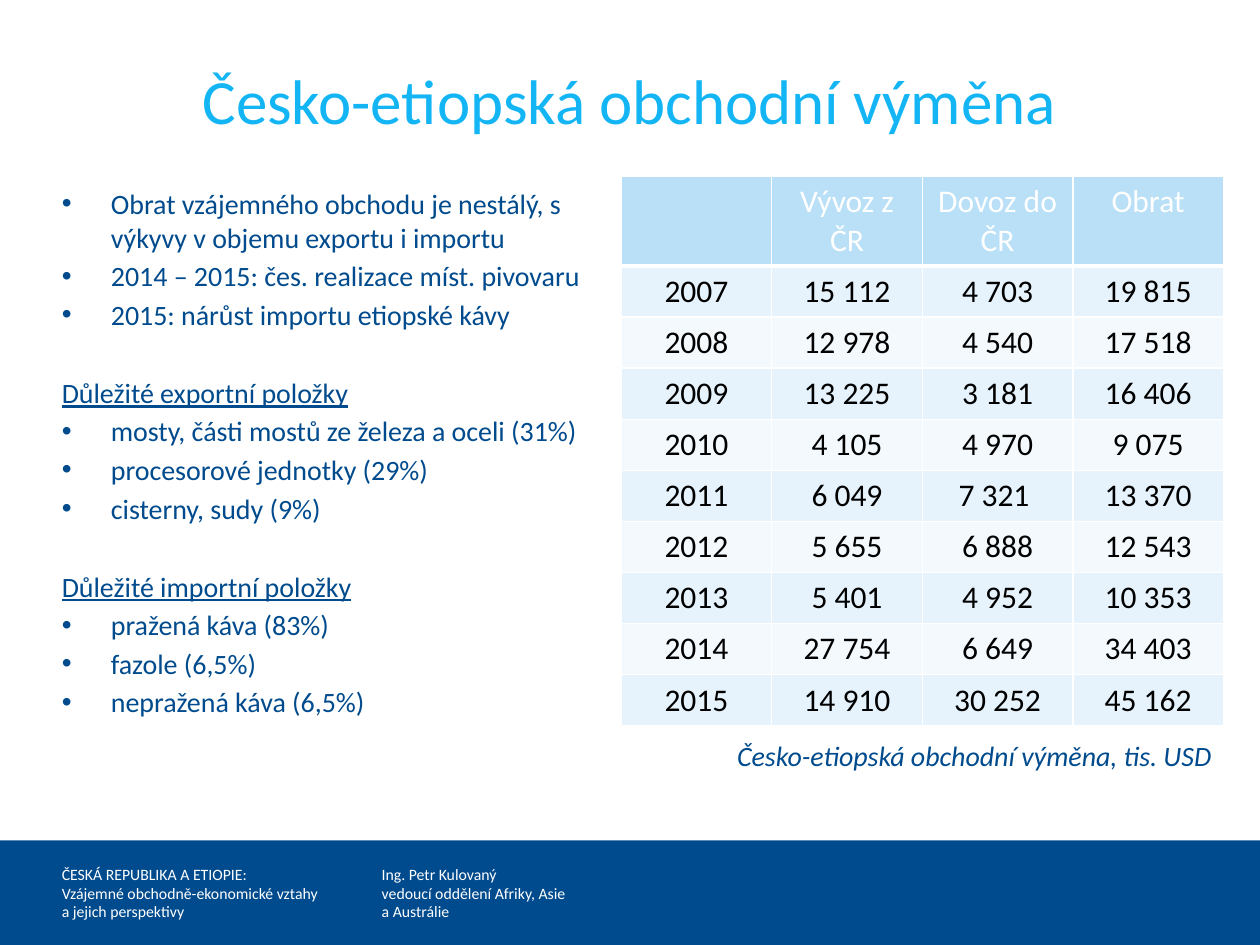
from lxml.etree import SubElement
from pptx import Presentation
from pptx.dml.color import RGBColor
from pptx.enum.shapes import MSO_SHAPE
from pptx.enum.text import MSO_ANCHOR, MSO_AUTO_SIZE, PP_ALIGN
from pptx.oxml.ns import qn
from pptx.util import Inches, Pt

NAVY = RGBColor(0x00, 0x4B, 0x8D)
SKY = RGBColor(0x13, 0xB5, 0xF4)
WHITE = RGBColor(0xFF, 0xFF, 0xFF)
BLACK = RGBColor(0x00, 0x00, 0x00)
HEADER_FILL = RGBColor(0xB9, 0xE0, 0xF7)
BAND_FILLS = (RGBColor(0xE6, 0xF3, 0xFC), RGBColor(0xF3, 0xF9, 0xFD))
FONT = "Calibri"

TITLE = "Česko-etiopská obchodní výměna"
CAPTION = "Česko-etiopská obchodní výměna, tis. USD"
SECTIONS = [
    (None, ["Obrat vzájemného obchodu je nestálý, s výkyvy v objemu exportu i importu",
            "2014 – 2015: čes. realizace míst. pivovaru",
            "2015: nárůst importu etiopské kávy"]),
    ("Důležité exportní položky", ["mosty, části mostů ze železa a oceli (31%)",
                                   "procesorové jednotky (29%)",
                                   "cisterny, sudy (9%)"]),
    ("Důležité importní položky", ["pražená káva (83%)",
                                   "fazole (6,5%)",
                                   "nepražená káva (6,5%)"]),
]
TRADE = [
    ("", "Vývoz z ČR", "Dovoz do ČR", "Obrat"),
    ("2007", "15 112", "4 703", "19 815"),
    ("2008", "12 978", "4 540", "17 518"),
    ("2009", "13 225", "3 181", "16 406"),
    ("2010", "4 105", "4 970", "9 075"),
    ("2011", "6 049", "7 321 ", "13 370"),
    ("2012", "5 655", "6 888", "12 543"),
    ("2013", "5 401", "4 952", "10 353"),
    ("2014", "27 754", "6 649", "34 403"),
    ("2015", "14 910", "30 252", "45 162"),
]
FOOTERS = [
    (4.9, 20.5, [["ČESKÁ REPUBLIKA A ETIOPIE:",
                  "Vzájemné obchodně-ekonomické vztahy a jejich perspektivy"]]),
    (30.3, 19.7, [["Ing. Petr Kulovaný"], ["vedoucí oddělení Afriky, Asie ", "a Austrálie"]]),
]

LEFT, FOOTER_TOP = 4.9, 88.93
TEXT_INSET = Inches(0.39)
ITEM_GAP, SECTION_GAP = Pt(2.9), Pt(25.3)

prs = Presentation()
prs.slide_width, prs.slide_height = Inches(10), Inches(7.5)
slide = prs.slides.add_slide(prs.slide_layouts[1])
slide.background.fill.solid()
slide.background.fill.fore_color.rgb = NAVY


def percent(left, top, width, height):
    across, down = prs.slide_width / 100, prs.slide_height / 100
    return [int(v * unit) for v, unit in zip((left, top, width, height), (across, down) * 2)]


def place(part, box):
    part.left, part.top, part.width, part.height = percent(*box)


def set_frame(frame, anchor=MSO_ANCHOR.TOP, inset_top=0):
    frame.margin_left = frame.margin_right = frame.margin_bottom = 0
    frame.margin_top = inset_top
    frame.vertical_anchor = anchor
    frame.word_wrap = True
    frame.auto_size = MSO_AUTO_SIZE.NONE


def next_paragraph(frame, first):
    return frame.paragraphs[0] if first else frame.add_paragraph()


def write(paragraph, text, size, color, italic=False, underline=False):
    run = paragraph.add_run()
    run.text = text
    font = run.font
    font.name, font.size, font.color.rgb = FONT, Pt(size), color
    font.bold, font.italic, font.underline = False, italic, underline


def set_bullet(paragraph, bulleted):
    props = paragraph._p.get_or_add_pPr()
    indent = TEXT_INSET if bulleted else 0
    props.set("marL", str(indent))
    props.set("indent", str(-indent))
    if bulleted:
        SubElement(props, qn("a:buChar")).set("char", "•")
    else:
        SubElement(props, qn("a:buNone"))


def set_borders(cell, bottom):
    props = cell._tc.get_or_add_tcPr()
    for side, width in (("L", 1), ("R", 1), ("T", 1), ("B", bottom)):
        line = SubElement(props, qn("a:ln" + side), w=str(Pt(width)))
        fill = SubElement(line, qn("a:solidFill"))
        SubElement(fill, qn("a:srgbClr"), val=str(WHITE))


page = slide.shapes.add_shape(MSO_SHAPE.RECTANGLE, *percent(0, 0, 100, FOOTER_TOP))
page.shadow.inherit = False
page.fill.solid()
page.fill.fore_color.rgb = WHITE
page.line.fill.background()
slide.shapes._spTree.insert(2, page._element)

for left, width, paragraphs in FOOTERS:
    footer = slide.shapes.add_textbox(*percent(left, FOOTER_TOP, width, 100 - FOOTER_TOP)).text_frame
    set_frame(footer, MSO_ANCHOR.MIDDLE)
    for i, lines in enumerate(paragraphs):
        paragraph = next_paragraph(footer, i == 0)
        for j, line in enumerate(lines):
            if j:
                paragraph.add_line_break()
            write(paragraph, line, 9, WHITE)

title = slide.shapes.title
place(title, (LEFT, 6.53, 90.1, 8.13))
set_frame(title.text_frame)
title.text_frame.paragraphs[0].alignment = PP_ALIGN.CENTER
write(title.text_frame.paragraphs[0], TITLE, 36, SKY)

body = slide.placeholders[1]
place(body, (LEFT, 14.53, 43, 67.87))
set_frame(body.text_frame, inset_top=TEXT_INSET)
for i, (heading, items) in enumerate(SECTIONS):
    if heading:
        paragraph = next_paragraph(body.text_frame, i == 0)
        set_bullet(paragraph, False)
        paragraph.space_before = SECTION_GAP
        write(paragraph, heading, 16, NAVY, underline=True)
    for j, item in enumerate(items):
        opening = i == 0 and j == 0
        paragraph = next_paragraph(body.text_frame, opening)
        set_bullet(paragraph, True)
        paragraph.space_before = Pt(0) if opening else ITEM_GAP
        write(paragraph, item, 16, NAVY)

trade = slide.shapes.add_table(len(TRADE), len(TRADE[0]), *percent(49.3, 18.67, 47.8, 57.33)).table
trade.horz_banding = False
for r, values in enumerate(TRADE):
    trade.rows[r].height = Inches(0.4 if r else 0.69)
    for c, value in enumerate(values):
        cell = trade.cell(r, c)
        set_borders(cell, 1 if r else 3)
        cell.fill.solid()
        cell.fill.fore_color.rgb = BAND_FILLS[(r - 1) % 2] if r else HEADER_FILL
        if value:
            paragraph = cell.text_frame.paragraphs[0]
            paragraph.alignment = PP_ALIGN.CENTER
            write(paragraph, value, 18, BLACK if r else WHITE)

caption = slide.shapes.add_textbox(*percent(58.5, 72.93, 38.6, 9.87)).text_frame
set_frame(caption, inset_top=TEXT_INSET)
write(caption.paragraphs[0], CAPTION, 16, NAVY, italic=True)

prs.save("out.pptx")
